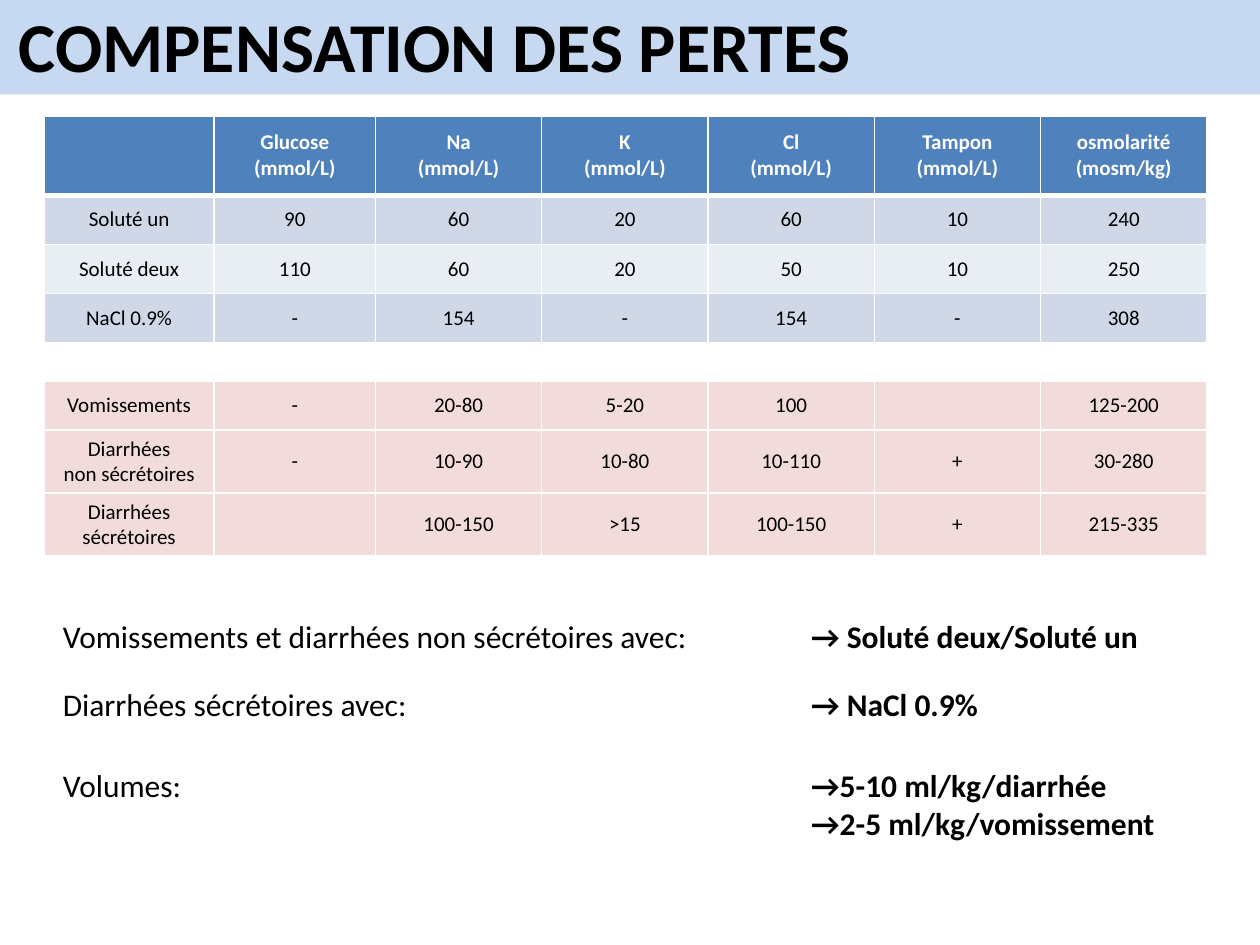
from lxml import etree
from pptx import Presentation
from pptx.dml.color import RGBColor
from pptx.enum.shapes import MSO_SHAPE
from pptx.enum.text import MSO_ANCHOR, MSO_AUTO_SIZE, PP_ALIGN
from pptx.oxml.ns import qn
from pptx.util import Inches, Pt

RECTANGLE = MSO_SHAPE.RECTANGLE
MIDDLE, TOP = MSO_ANCHOR.MIDDLE, MSO_ANCHOR.TOP
CENTER, LEFT = PP_ALIGN.CENTER, PP_ALIGN.LEFT
NO_AUTOFIT = MSO_AUTO_SIZE.NONE

WHITE = RGBColor(0xFF, 0xFF, 0xFF)
BLACK = RGBColor(0x00, 0x00, 0x00)
BAND_BLUE = RGBColor(0xC6, 0xD9, 0xF1)
HEADER_BLUE = RGBColor(0x4F, 0x81, 0xBD)
ROW_BLUE = RGBColor(0xD0, 0xD8, 0xE8)
ROW_PALE = RGBColor(0xE9, 0xED, 0xF4)
LOSS_PINK = RGBColor(0xF2, 0xDC, 0xDB)

COLUMN_WIDTHS = [1.35, 1.28] + [1.32] * 5
HEADER = ["", "Glucose\n(mmol/L)", "Na\n(mmol/L)", "K\n(mmol/L)", "Cl\n(mmol/L)",
          "Tampon\n(mmol/L)", "osmolarité\n(mosm/kg)"]
TABLE_ROWS = [
    (0.63, HEADER_BLUE, HEADER),
    (0.39, ROW_BLUE, ["Soluté un", "90", "60", "20", "60", "10", "240"]),
    (0.39, ROW_PALE, ["Soluté deux", "110", "60", "20", "50", "10", "250"]),
    (0.39, ROW_BLUE, ["NaCl 0.9%", "-", "154", "-", "154", "-", "308"]),
    (0.3, WHITE, [""] * 7),
    (0.39, LOSS_PINK, ["Vomissements", "-", "20-80", "5-20", "100", "", "125-200"]),
    (0.5, LOSS_PINK, ["Diarrhées\nnon sécrétoires", "-", "10-90", "10-80", "10-110",
                      "+", "30-280"]),
    (0.5, LOSS_PINK, ["Diarrhées sécrétoires", "", "100-150", ">15", "100-150",
                      "+", "215-335"]),
]
ADVICE = [
    (0, "Vomissements et diarrhées non sécrétoires avec:", "→ Soluté deux/Soluté un"),
    (0.54, "Diarrhées sécrétoires avec:", "→ NaCl 0.9%"),
    (1.18, "Volumes:", "→5-10 ml/kg/diarrhée\n→2-5 ml/kg/vomissement"),
]


def write_text(text_frame, text, size, color=BLACK, bold=False, alignment=LEFT):
    text_frame.text = text
    font_format = {"name": "Calibri", "size": Pt(size), "bold": bold}
    for paragraph in text_frame.paragraphs:
        paragraph.alignment = alignment
        for run in paragraph.runs:
            for name, value in font_format.items():
                setattr(run.font, name, value)
            run.font.color.rgb = color


def set_borders(cell, widths):
    properties = cell._tc.get_or_add_tcPr()
    for side, width in widths.items():
        line = etree.SubElement(properties, qn("a:ln" + side), w=str(Pt(width)))
        fill = etree.SubElement(line, qn("a:solidFill"))
        etree.SubElement(fill, qn("a:srgbClr"), val=str(WHITE))


def add_title(slide, left, top, width, height):
    band = slide.shapes.add_shape(RECTANGLE, left, top, width, height)
    band.shadow.inherit = False
    band.fill.solid()
    band.fill.fore_color.rgb = BAND_BLUE
    band.line.fill.background()
    title = slide.shapes.title
    band.element.addnext(title.element)
    box = {"left": left + Inches(0.05), "top": top - Inches(0.03),
           "width": Inches(6.94), "height": Inches(0.77)}
    for name, value in box.items():
        setattr(title, name, value)
    write_text(title.text_frame, "COMPENSATION DES PERTES", 40, bold=True)
    frame_format = {"word_wrap": False, "auto_size": NO_AUTOFIT, "vertical_anchor": MIDDLE}
    for name, value in frame_format.items():
        setattr(title.text_frame, name, value)


def add_composition_table(slide, left, top, width, height):
    table = slide.shapes.add_table(
        len(TABLE_ROWS), len(COLUMN_WIDTHS), left, top, width, height).table
    table.first_row = table.horz_banding = False
    for column, column_width in zip(table.columns, COLUMN_WIDTHS):
        column.width = Inches(column_width)
    cell_format = {"vertical_anchor": MIDDLE, "margin_top": 0, "margin_bottom": 0}
    for index, (row_height, fill_color, texts) in enumerate(TABLE_ROWS):
        is_header = index == 0
        table.rows[index].height = Inches(row_height)
        borders = {"L": 1, "R": 1, "T": 3 if index == 1 else 1, "B": 3 if is_header else 1}
        for cell, text in zip(table.rows[index].cells, texts):
            write_text(cell.text_frame, text, 12, WHITE if is_header else BLACK,
                       is_header, CENTER)
            for name, value in cell_format.items():
                setattr(cell, name, value)
            set_borders(cell, borders)
            cell.fill.solid()
            cell.fill.fore_color.rgb = fill_color


def add_advice(slide, left, top, width):
    answer_offset = Inches(5.94)
    for offset, situation, answer in ADVICE:
        columns = [(left, Inches(6.1), situation, False),
                   (left + answer_offset, width - answer_offset, answer, True)]
        for box_left, box_width, text, bold in columns:
            box_height = Inches(0.4 + 0.3 * text.count("\n"))
            box = slide.shapes.add_textbox(
                box_left, top + Inches(offset), box_width, box_height)
            box.text_frame.word_wrap = True
            box.text_frame.vertical_anchor = TOP
            write_text(box.text_frame, text, 18, bold=bold)


def main():
    presentation = Presentation()
    presentation.slide_width, presentation.slide_height = Inches(10), Inches(7.5)
    slide = presentation.slides.add_slide(presentation.slide_layouts.get_by_name("Title Only"))
    add_title(slide, 0, 0, presentation.slide_width, Inches(0.75))
    add_composition_table(slide, Inches(0.35), Inches(0.92), Inches(9.21), Inches(3.49))
    add_advice(slide, Inches(0.4), Inches(4.85), Inches(9.57))
    presentation.save("out.pptx")


if __name__ == "__main__":
    main()
